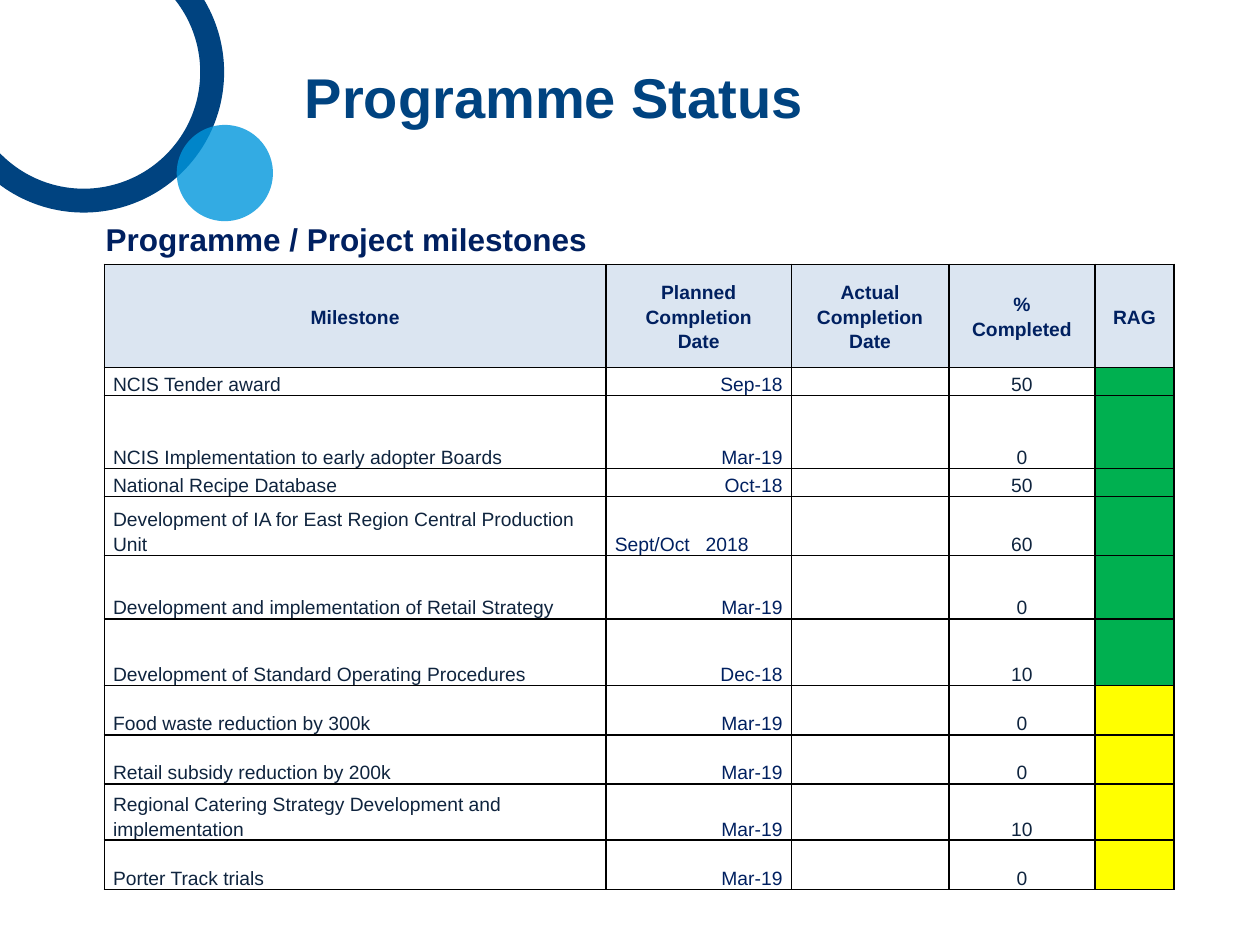
from lxml.etree import SubElement
from pptx import Presentation
from pptx.dml.color import RGBColor
from pptx.enum.shapes import MSO_SHAPE
from pptx.enum.text import MSO_ANCHOR, MSO_AUTO_SIZE, PP_ALIGN
from pptx.oxml.ns import qn
from pptx.util import Pt

BLUE = RGBColor(0x00, 0x43, 0x80)
SKY = RGBColor(0x00, 0x96, 0xDC)
NAVY = RGBColor(0x00, 0x20, 0x60)
INK = RGBColor(0x0F, 0x24, 0x3E)
PALE = RGBColor(0xDB, 0xE5, 0xF1)
WHITE = RGBColor(0xFF, 0xFF, 0xFF)
GREEN = RGBColor(0x00, 0xB0, 0x50)
YELLOW = RGBColor(0xFF, 0xFF, 0x00)
BLACK = "000000"

FONT = "Arial"
LEFT, CENTER, RIGHT = PP_ALIGN.LEFT, PP_ALIGN.CENTER, PP_ALIGN.RIGHT

TITLE = "Programme Status"
HEADING = "Programme / Project milestones"
HEADS = [
    ["Milestone"],
    ["Planned Completion", "Date"],
    ["Actual Completion", "Date"],
    ["%", "Completed"],
    ["RAG"],
]
# milestone, planned date, percent completed, status, row height
ROWS = [
    ("NCIS Tender award", "Sep-18", "50", GREEN, 16),
    ("NCIS Implementation to early adopter Boards", "Mar-19", "0", GREEN, 41.8),
    ("National Recipe Database", "Oct-18", "50", GREEN, 16),
    ("Development of IA for East Region Central Production Unit",
     "Sept/Oct\t2018", "60", GREEN, 33.8),
    ("Development and implementation of Retail Strategy", "Mar-19", "0", GREEN, 36.2),
    ("Development of Standard Operating Procedures", "Dec-18", "10", GREEN, 38.2),
    ("Food waste reduction by 300k", "Mar-19", "0", YELLOW, 28.1),
    ("Retail subsidy reduction by 200k", "Mar-19", "0", YELLOW, 28.1),
    ("Regional Catering Strategy Development and implementation",
     "Mar-19", "10", YELLOW, 32.1),
    ("Porter Track trials", "Mar-19", "0", YELLOW, 28.1),
]
WIDTHS = [286.7, 105.9, 90, 83.6, 45]
HEAD_HIGH = 58.9
TAB = 52


def write(para, text, size, color, bold=False):
    run = para.add_run()
    run.text = text
    font = run.font
    font.name, font.size, font.bold = FONT, Pt(size), bold
    font.color.rgb = color


def add_disc(slide, kind, left, top, size, color):
    disc = slide.shapes.add_shape(kind, Pt(left), Pt(top), Pt(size), Pt(size))
    disc.shadow.inherit = False
    disc.fill.solid()
    disc.fill.fore_color.rgb = color
    disc.line.fill.background()
    return disc


def add_tab(para):
    stops = SubElement(para._p.get_or_add_pPr(), qn("a:tabLst"))
    SubElement(stops, qn("a:tab"), pos=str(Pt(TAB)), algn="l")


def draw_edges(cell):
    """Rule all four sides; the lines must precede the fill in the XML."""
    props = cell._tc.get_or_add_tcPr()
    for side in ("a:lnL", "a:lnR", "a:lnT", "a:lnB"):
        line = SubElement(props, qn(side), w=str(Pt(1)))
        fill = SubElement(line, qn("a:solidFill"))
        SubElement(fill, qn("a:srgbClr"), val=BLACK)


def fill_cell(cell, lines, align, anchor, back, color, bold=False):
    draw_edges(cell)
    cell.fill.solid()
    cell.fill.fore_color.rgb = back
    cell.margin_left = cell.margin_right = Pt(5)
    cell.margin_top = cell.margin_bottom = 0
    cell.vertical_anchor = anchor
    frame = cell.text_frame
    for i, text in enumerate(lines):
        para = frame.add_paragraph() if i else frame.paragraphs[0]
        para.alignment = align
        para.line_spacing = 1.15
        if "\t" in text:
            add_tab(para)
        write(para, text, 11, color, bold)
    if not lines:
        frame.paragraphs[0]._p.get_or_add_endParaRPr().set("sz", "1100")


def add_grid(slide):
    high = HEAD_HIGH + sum(row[-1] for row in ROWS)
    table = slide.shapes.add_table(
        len(ROWS) + 1, len(WIDTHS), Pt(59.6), Pt(151), Pt(sum(WIDTHS)), Pt(high)
    ).table
    for col, width in zip(table.columns, WIDTHS):
        col.width = Pt(width)
    table.rows[0].height = Pt(HEAD_HIGH)
    for c, lines in enumerate(HEADS):
        fill_cell(table.cell(0, c), lines, CENTER, MSO_ANCHOR.MIDDLE, PALE, NAVY, True)
    for r, (name, date, done, status, height) in enumerate(ROWS, 1):
        table.rows[r].height = Pt(height)
        cells = [
            ([name], LEFT, WHITE, INK),
            ([date], LEFT if "\t" in date else RIGHT, WHITE, NAVY),
            ([], LEFT, WHITE, INK),
            ([done], CENTER, WHITE, INK),
            ([], LEFT, status, INK),
        ]
        for c, (lines, align, back, color) in enumerate(cells):
            fill_cell(table.cell(r, c), lines, align, MSO_ANCHOR.BOTTOM, back, color)


def main():
    deck = Presentation()
    deck.slide_width, deck.slide_height = Pt(720), Pt(540)
    slide = deck.slides.add_slide(deck.slide_layouts[5])

    ring = add_disc(slide, MSO_SHAPE.DONUT, -32.4, -39, 160.5, BLUE)
    ring.adjustments[0] = 0.085
    dot = add_disc(slide, MSO_SHAPE.OVAL, 101, 71.4, 55, SKY)
    tint = dot.fill._xPr.find(qn("a:solidFill"))[0]
    SubElement(tint, qn("a:alpha"), val="80000")

    title = slide.shapes.title
    title.left, title.top, title.width, title.height = Pt(167), Pt(32), Pt(351), Pt(46)
    frame = title.text_frame
    frame.auto_size = MSO_AUTO_SIZE.NONE
    frame.vertical_anchor = MSO_ANCHOR.MIDDLE
    frame.paragraphs[0].alignment = LEFT
    write(frame.paragraphs[0], TITLE, 32, BLUE, True)

    box = slide.shapes.add_textbox(Pt(53.3), Pt(118.8), Pt(292), Pt(32.4))
    para = box.text_frame.paragraphs[0]
    para.line_spacing = 1.15
    write(para, HEADING, 18, NAVY, True)

    add_grid(slide)
    deck.save("out.pptx")


if __name__ == "__main__":
    main()
